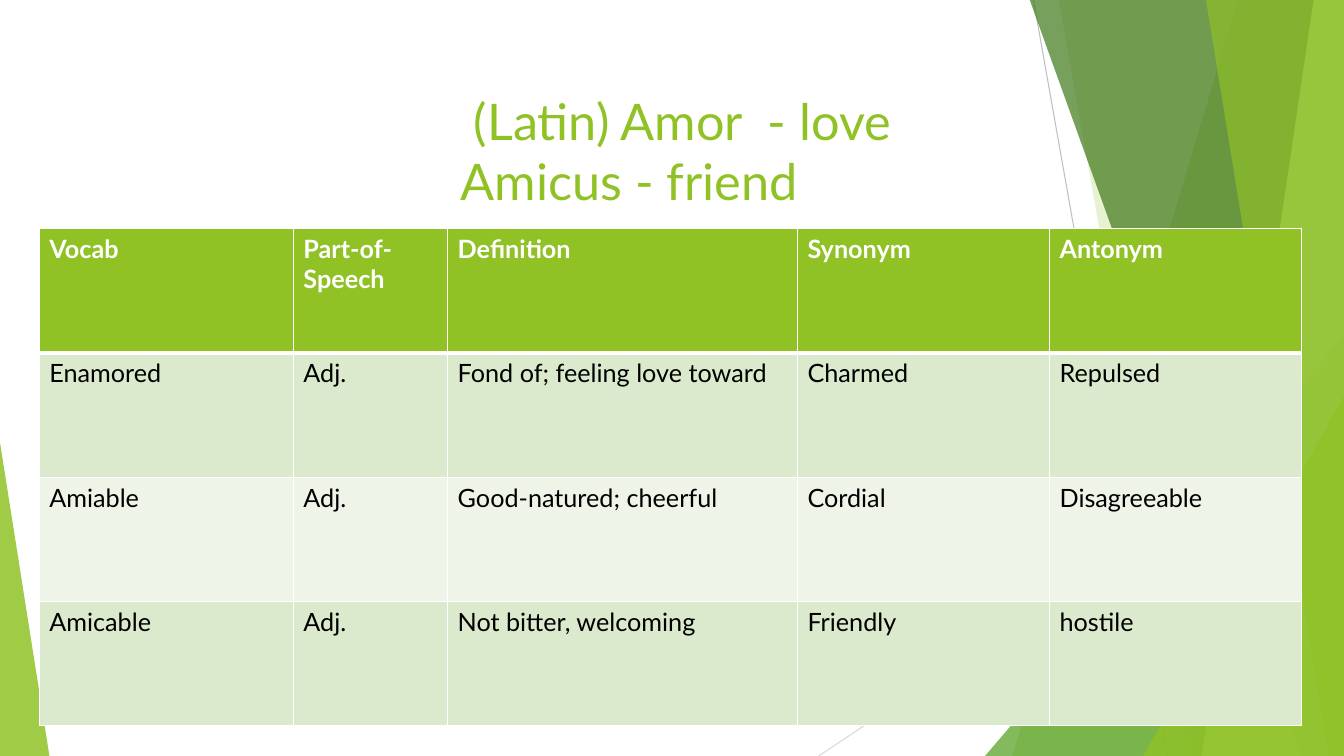
from collections import namedtuple

from lxml import etree
from pptx import Presentation
from pptx.dml.color import RGBColor
from pptx.enum.shapes import MSO_CONNECTOR, MSO_SHAPE
from pptx.enum.text import MSO_ANCHOR, PP_ALIGN
from pptx.oxml.ns import qn
from pptx.util import Inches, Pt

STRAIGHT = MSO_CONNECTOR.STRAIGHT
TRIANGLE = MSO_SHAPE.RIGHT_TRIANGLE, MSO_SHAPE.ISOSCELES_TRIANGLE
TRIANGLE = TRIANGLE[1]
LEFT, TOP = PP_ALIGN.LEFT, MSO_ANCHOR.TOP

WIDTH, HEIGHT = 13.33, 7.5
FONT = "Lato"
COLORS = {
    "lime": "90C226", "green": "54A021", "forest": "3F7819", "pale": "C0E474",
    "line": "BFBFBF", "faint": "D9D9D9", "white": "FFFFFF", "black": "000000",
    "band": "DBE9CD", "band_light": "EEF4E8",
}
Box = namedtuple("Box", "left top width height")

ROWS = [
    ["Vocab", "Part-of-\nSpeech", "Definition", "Synonym", "Antonym"],
    ["Enamored", "Adj.", "Fond of; feeling love toward", "Charmed", "Repulsed"],
    ["Amiable", "Adj.", "Good-natured; cheerful", "Cordial", "Disagreeable"],
    ["Amicable", "Adj.", "Not bitter, welcoming", "Friendly", "hostile"],
]
COLUMN_WIDTHS = [2.52, 1.53, 3.47, 2.5, 2.5]


def rgb(name):
    return RGBColor.from_string(COLORS[name])


def inches(box):
    return [Inches(v) for v in box]


def paint(sp, color, opacity):
    """Fill a shape with a translucent colour, without outline or shadow."""
    sp.shadow.inherit = False
    sp.line.fill.background()
    sp.fill.solid()
    sp.fill.fore_color.rgb = rgb(color)
    clr = sp.element.spPr.find(qn("a:solidFill")).find(qn("a:srgbClr"))
    etree.SubElement(clr, qn("a:alpha")).set("val", str(opacity * 1000))


def add_hairline(s, start, end, color):
    line = s.shapes.add_connector(STRAIGHT, *inches(start + end))
    line.line.color.rgb = rgb(color)
    line.line.width = Pt(0.75)
    etree.SubElement(line.element.spPr, qn("a:effectLst"))


def add_panel(s, box, top_x, bottom_x, color, opacity):
    """Full-height panel with a slanted left edge, flush with the box's right."""
    right, bottom = box.left + box.width, box.top + box.height
    points = [(right, box.top), (right, bottom), (bottom_x, bottom)]
    builder = s.shapes.build_freeform(Inches(top_x), Inches(box.top))
    builder.add_line_segments([inches(point) for point in points], close=True)
    paint(builder.convert_to_shape(), color, opacity)


def add_corner(s, box, apex, color, opacity):
    sp = s.shapes.add_shape(TRIANGLE, *inches(box))
    sp.adjustments[0] = apex
    paint(sp, color, opacity)


def corner_box(box, width, height):
    """Box of the given size in the lower right corner of another box."""
    return Box(box.left + box.width - width, box.top + box.height - height, width, height)


def add_facets(s, box):
    bleed = Box(box.left, box.top - 0.01, box.width, box.height + 0.01)
    right, bottom = box.left + box.width, box.top + box.height
    add_hairline(s, (10.25, box.top), (11.58, bottom), "line")
    add_hairline(s, (right, 4.03), (8.12, bottom), "faint")
    add_panel(s, bleed, 12.28, 10.04, "lime", 30)
    add_panel(s, bleed, 10.5, 11.83, "lime", 20)
    add_corner(s, corner_box(box, 3.56, 4.17), 1, "green", 72)
    add_panel(s, bleed, 10.21, 12.91, "forest", 70)
    add_panel(s, bleed, 13.03, 11.92, "pale", 70)
    add_panel(s, bleed, 11.96, 13.18, "lime", 65)
    add_corner(s, corner_box(box, 1.99, 3.57), 1, "lime", 80)
    add_corner(s, Box(box.left, bottom - 3.11, 0.49, 3.11), 0, "lime", 85)


def add_title(s, box):
    title = s.shapes.title
    title.left, title.top, title.width, title.height = inches(box)
    title.element.getparent().append(title.element)  # in front of the facets
    tf = title.text_frame
    tf.word_wrap = True
    tf.vertical_anchor = TOP
    p = tf.paragraphs[0]
    p.text = " (Latin) Amor  - love \vAmicus - friend"
    p.alignment = LEFT
    p.font.size, p.font.name = Pt(36), FONT
    p.font.color.rgb = rgb("lime")


def set_borders(cell, widths):
    """Draw white borders, widths in points keyed by side."""
    tc_pr = cell._tc.get_or_add_tcPr()
    for i, side in enumerate("LRTB"):
        ln = etree.Element(qn("a:ln" + side), w=str(Pt(widths[side])))
        fill = etree.SubElement(ln, qn("a:solidFill"))
        etree.SubElement(fill, qn("a:srgbClr"), val=COLORS["white"])
        tc_pr.insert(i, ln)


def fill_cell(cell, text, row):
    header = row == 0
    cell.text = text
    for p in cell.text_frame.paragraphs:
        p.font.size, p.font.name, p.font.bold = Pt(18), FONT, header
        p.font.color.rgb = rgb("white" if header else "black")
    cell.fill.solid()
    banding = "band" if row % 2 else "band_light"
    cell.fill.fore_color.rgb = rgb("lime" if header else banding)
    set_borders(cell, {"L": 1, "R": 1, "T": 3 if row == 1 else 1, "B": 3 if header else 1})


def add_vocabulary(s, box):
    frame = s.shapes.add_table(len(ROWS), len(COLUMN_WIDTHS), *inches(box))
    table = frame.table
    for column, width in zip(table.columns, COLUMN_WIDTHS):
        column.width = Inches(box.width * width / sum(COLUMN_WIDTHS))
    for i, texts in enumerate(ROWS):
        table.rows[i].height = Inches(box.height / len(ROWS))
        for j, text in enumerate(texts):
            fill_cell(table.cell(i, j), text, i)


def main():
    prs = Presentation()
    prs.slide_width, prs.slide_height = Inches(WIDTH), Inches(HEIGHT)
    s = prs.slides.add_slide(prs.slide_layouts.get_by_name("Title Only"))
    s.background.fill.solid()
    s.background.fill.fore_color.rgb = rgb("white")
    add_facets(s, Box(0, 0, WIDTH, HEIGHT))
    add_title(s, Box(4.47, 0.84, 8.13, 1.61))
    add_vocabulary(s, Box(0.39, 2.27, 12.52, 4.93))
    prs.save("out.pptx")


if __name__ == "__main__":
    main()
